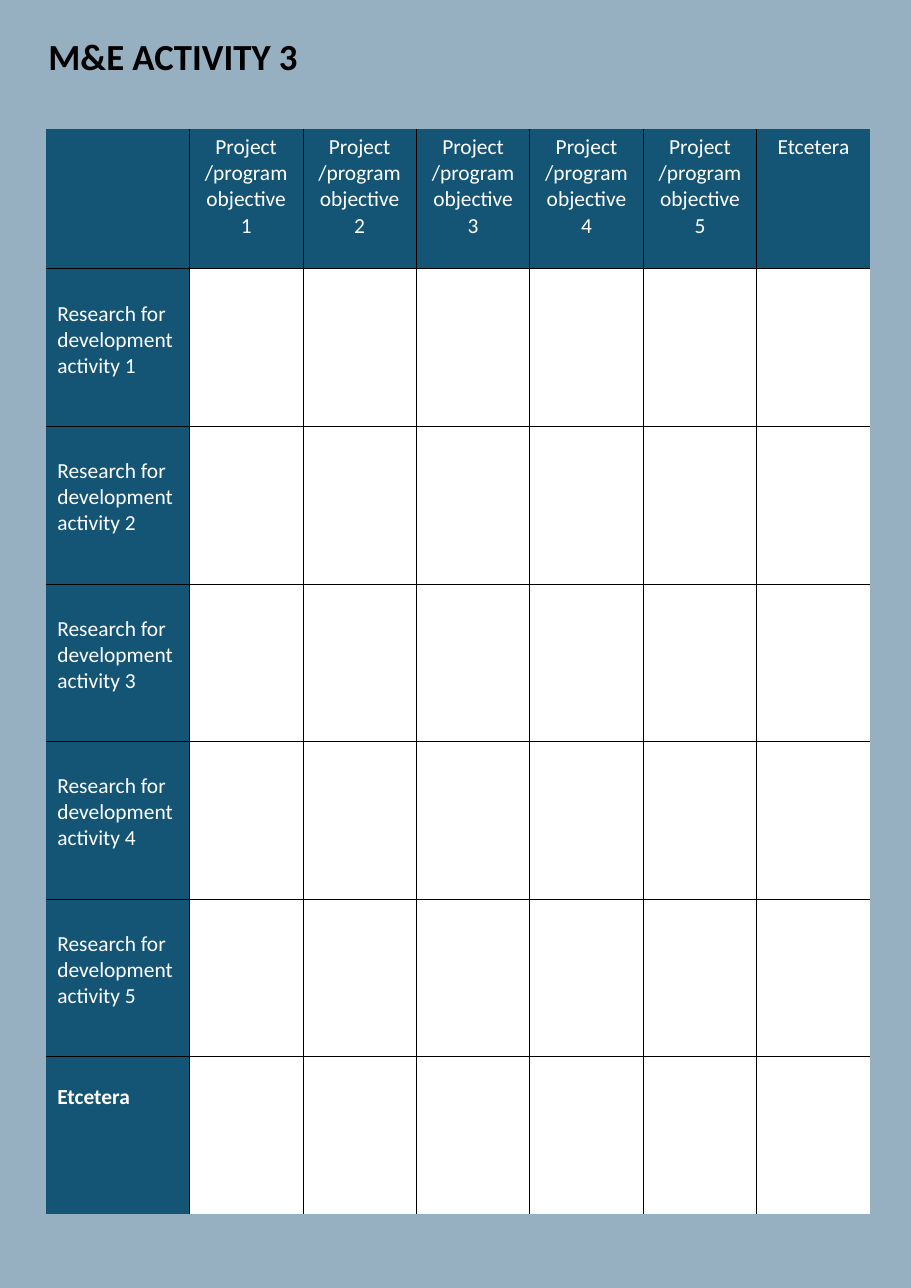
from lxml import etree
from pptx import Presentation
from pptx.dml.color import RGBColor
from pptx.enum.text import PP_ALIGN as Align
from pptx.oxml.ns import qn
from pptx.util import Inches, Pt

# Content
TITLE = "M&E ACTIVITY 3"
LAST = "Etcetera"
OBJECTIVES = [["Project /program", f"objective {n}"] for n in range(1, 6)] + [[LAST]]
ACTIVITIES = [f"Research for development activity {n}" for n in range(1, 6)] + [LAST]

# Look
FONT = "Calibri"
BACKGROUND = RGBColor(0x96, 0xB0, 0xC1)
HEADING = RGBColor(0x14, 0x55, 0x76)
WHITE = RGBColor(0xFF, 0xFF, 0xFF)
BLACK = RGBColor(0, 0, 0)

# Grid
LEFT, TOP = 0.42, 1.17
COLUMNS = [1.3] + [1.03] * len(OBJECTIVES)
ROWS = [1.27] + [1.43] * len(ACTIVITIES)


def write(frame, lines, size=14, color=WHITE, bold=False, align=Align.LEFT):
    frame.word_wrap = True
    for index, line in enumerate(lines):
        para = frame.paragraphs[0] if index == 0 else frame.add_paragraph()
        para.alignment = align
        span = para.add_run()
        span.text = line
        span.font.name = FONT
        span.font.size = Pt(size)
        span.font.bold = bold
        span.font.color.rgb = color


def draw_borders(cell, shown):
    """Rule the inner sides of a cell and leave the outer sides bare."""
    properties = cell._tc.get_or_add_tcPr()
    for side, visible in shown.items():
        line = etree.SubElement(properties, qn(f"a:ln{side}"), w=str(Pt(0.5)))
        if visible:
            fill = etree.SubElement(line, qn("a:solidFill"))
            etree.SubElement(fill, qn("a:srgbClr"), val=str(BLACK))
        else:
            etree.SubElement(line, qn("a:noFill"))


deck = Presentation()
deck.slide_width, deck.slide_height = Inches(8.27), Inches(11.69)
page = deck.slides.add_slide(deck.slide_layouts[6])
page.background.fill.solid()
page.background.fill.fore_color.rgb = BACKGROUND

# Title
box = page.shapes.add_textbox(Inches(0.34), Inches(0.26), Inches(7.58), Inches(0.5))
write(box.text_frame, [TITLE], size=24, color=BLACK, bold=True)

# Matrix of activities against objectives
matrix = page.shapes.add_table(
    len(ROWS), len(COLUMNS), Inches(LEFT), Inches(TOP),
    Inches(sum(COLUMNS)), Inches(sum(ROWS))).table
matrix.first_row = matrix.horz_banding = False
for column, width in zip(matrix.columns, COLUMNS):
    column.width = Inches(width)
for row, height in zip(matrix.rows, ROWS):
    row.height = Inches(height)

for r in range(len(ROWS)):
    for c in range(len(COLUMNS)):
        cell = matrix.cell(r, c)
        draw_borders(cell, {"L": c > 0, "R": c < len(COLUMNS) - 1,
                            "T": r > 0, "B": r < len(ROWS) - 1})
        cell.fill.solid()
        cell.fill.fore_color.rgb = WHITE if r and c else HEADING

# Headings
for c, lines in enumerate(OBJECTIVES, start=1):
    write(matrix.cell(0, c).text_frame, lines, align=Align.CENTER)
for r, activity in enumerate(ACTIVITIES, start=1):
    cell = matrix.cell(r, 0)
    cell.margin_top = Inches(0.25 if activity == LAST else 0.29)
    write(cell.text_frame, [activity], bold=activity == LAST)

deck.save("out.pptx")
